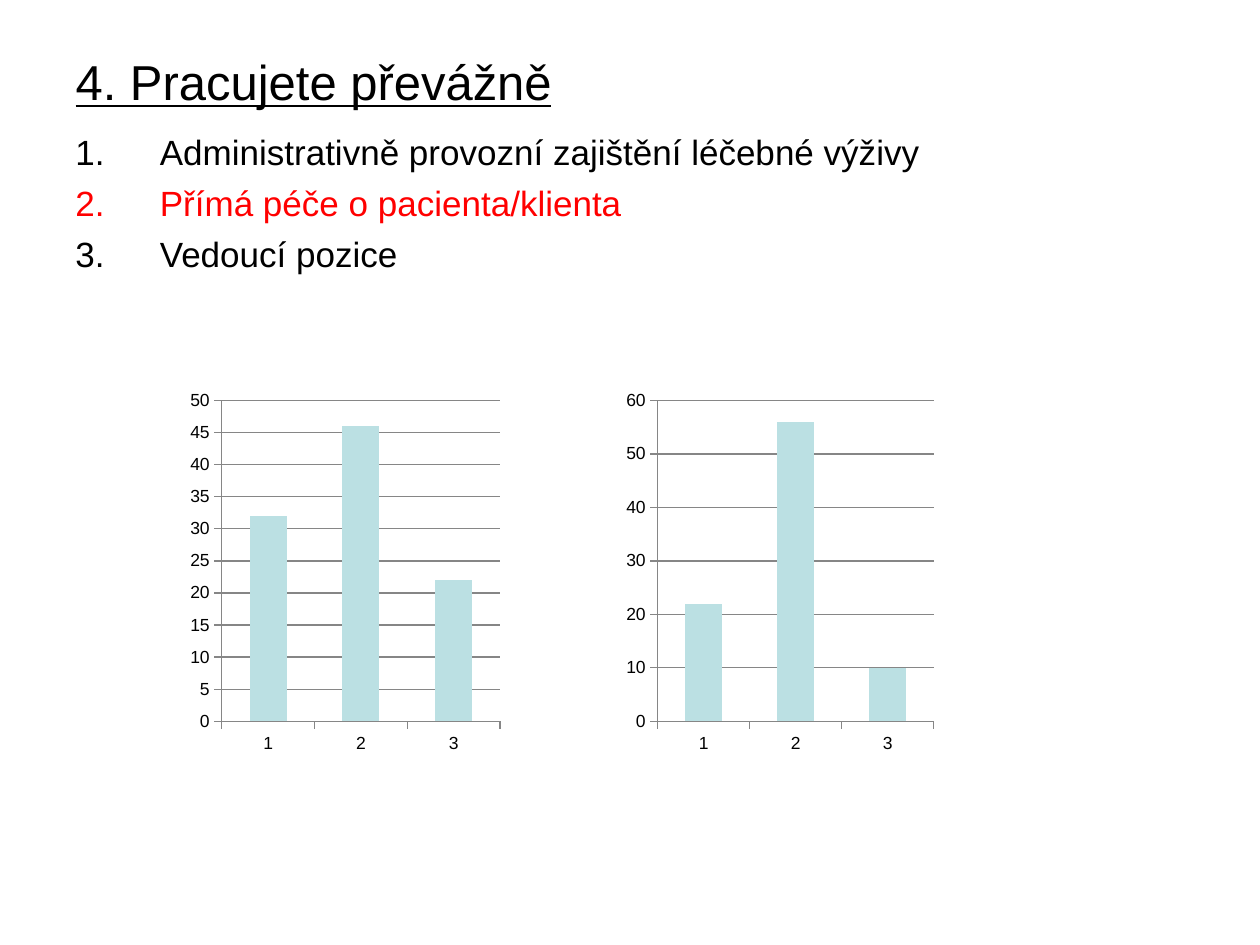
from lxml import etree
from pptx import Presentation
from pptx.chart.data import CategoryChartData
from pptx.dml.color import RGBColor
from pptx.enum.chart import XL_CHART_TYPE, XL_TICK_MARK
from pptx.enum.text import MSO_ANCHOR, PP_ALIGN
from pptx.oxml.ns import qn
from pptx.util import Inches, Pt

COLUMN = XL_CHART_TYPE.COLUMN_CLUSTERED
OUTSIDE, NO_TICK = XL_TICK_MARK.OUTSIDE, XL_TICK_MARK.NONE
MIDDLE, LEFT = MSO_ANCHOR.MIDDLE, PP_ALIGN.LEFT
COLORS = {"text": "000000", "accent": "FF0000", "bar": "BBE0E3", "line": "868686"}


def color(name):
    return RGBColor.from_string(COLORS[name])


class Page:
    face = "Arial"

    def __init__(self, slide):
        self.slide = slide

    def style(self, font, size, name="text"):
        font.name, font.size = self.face, Pt(size)
        font.color.rgb = color(name)

    def title(self, text, left, top, width, height):
        shape = self.slide.shapes.title
        shape.left, shape.top = Inches(left), Inches(top)
        shape.width, shape.height = Inches(width), Inches(height)
        frame = shape.text_frame
        frame.text = text
        frame.vertical_anchor = MIDDLE
        line = frame.paragraphs[0]
        line.alignment = LEFT
        self.style(line.font, 28)
        line.font.underline = True

    def numbers(self, items, left, top, width, height):
        """Add a numbered list of (text, color name) items."""
        box = self.slide.shapes.add_textbox(
            Inches(left), Inches(top), Inches(width), Inches(height))
        frame = box.text_frame
        frame.word_wrap = True
        frame.text = "\n".join(text for text, _ in items)
        for line, (_, name) in zip(frame.paragraphs, items):
            props = line._p.get_or_add_pPr()
            indent = Inches(0.67)
            props.set("marL", str(indent))
            props.set("indent", str(-indent))
            etree.SubElement(props, qn("a:buAutoNum"), type="arabicPeriod")
            line.space_before = Pt(5)
            self.style(line.font, 20, name)

    def line(self, form):
        form.line.color.rgb = color("line")
        form.line.width = Pt(0.75)

    def columns(self, values, top_value, step, left, top, width, height):
        data = CategoryChartData()
        data.categories = [str(n) for n in range(1, len(values) + 1)]
        data.add_series("Series 1", values)
        chart = self.slide.shapes.add_chart(
            COLUMN, Inches(left), Inches(top), Inches(width), Inches(height), data).chart
        chart.has_legend = chart.has_title = False
        self.style(chart.font, 10)

        plot = chart.plots[0]
        plot.gap_width = 150
        plot.vary_by_categories = False
        fill = plot.series[0].format.fill
        fill.solid()
        fill.fore_color.rgb = color("bar")

        for axis in (chart.category_axis, chart.value_axis):
            axis.major_tick_mark, axis.minor_tick_mark = OUTSIDE, NO_TICK
            self.line(axis.format)
        scale = chart.value_axis
        scale.minimum_scale, scale.maximum_scale = 0, top_value
        scale.major_unit = step
        scale.has_major_gridlines = True
        self.line(scale.major_gridlines.format)


def main():
    deck = Presentation()
    deck.slide_width, deck.slide_height = Inches(10), Inches(7.5)
    page = Page(deck.slides.add_slide(deck.slide_layouts[5]))
    page.title("4. Pracujete převážně", 0.5, 0.3, 9, 0.69)
    page.numbers([
        ("Administrativně provozní zajištění léčebné výživy", "text"),
        ("Přímá péče o pacienta/klienta", "accent"),
        ("Vedoucí pozice", "text"),
    ], 0.5, 0.99, 8.91, 1.65)
    page.columns((22, 56, 10), 60, 10, 4.92, 3.04, 2.54, 3)
    page.columns((32, 46, 22), 50, 5, 1.46, 3.04, 2.56, 3)
    deck.save("out.pptx")


if __name__ == "__main__":
    main()
